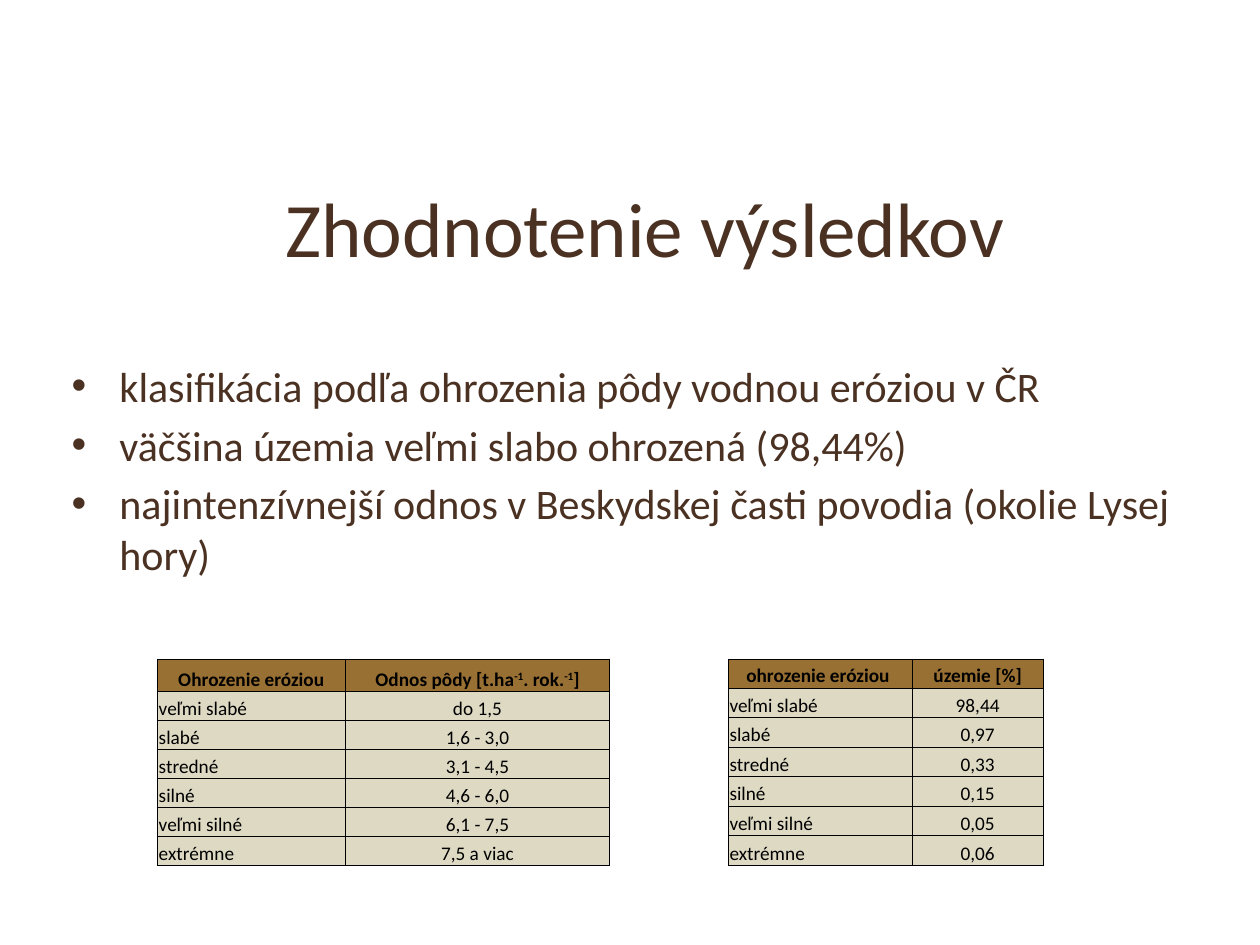
import pptx
import pptx.dml.color
import pptx.enum.text
import pptx.oxml
import pptx.oxml.ns
import pptx.util
from pptx.util import Inches

FONT = "Calibri"
BROWN, BLACK, HEADER_FILL, BODY_FILL = "4A3122", "000000", "997033", "DDD9C3"
ALIGN = pptx.enum.text.PP_ALIGN
ANCHOR = pptx.enum.text.MSO_ANCHOR
NS = pptx.oxml.ns.nsdecls("a")

TITLE = "Zhodnotenie výsledkov"
FINDINGS = [
    "klasifikácia podľa ohrozenia pôdy vodnou eróziou v ČR",
    "väčšina územia veľmi slabo ohrozená (98,44%)",
    "najintenzívnejší odnos v Beskydskej časti povodia (okolie Lysej hory)",
]
CLASSES = ["veľmi slabé", "slabé", "stredné", "silné", "veľmi silné", "extrémne"]

# A header is a list of runs; every second run is superscript
TABLE_TOP, TABLE_HEIGHT = 5.23, 1.64
TABLES = [
    {"left": 5.78, "columns": [1.46, 1.04], "header_height": 0.23,
     "headers": [["ohrozenie eróziou "], ["územie [%]"]],
     "values": ["98,44", "0,97", "0,33", "0,15", "0,05", "0,06"]},
    {"left": 1.25, "columns": [1.49, 2.1], "header_height": 0.26,
     "headers": [["Ohrozenie eróziou"],
                 ["Odnos pôdy [t.ha", "-1", ". rok.", "-1", "]"]],
     "values": ["do 1,5", "1,6 - 3,0", "3,1 - 4,5", "4,6 - 6,0", "6,1 - 7,5",
                "7,5 a viac"]},
]


def color(value):
    return pptx.dml.color.RGBColor.from_string(value)


def add_run(paragraph, text, size, ink, bold=False):
    run = paragraph.add_run()
    run.text = text
    run.font.name = FONT
    run.font.size = pptx.util.Pt(size)
    run.font.bold = bold
    run.font.color.rgb = color(ink)
    return run


def add_text_frame(slide, left, top, width, height, anchor):
    frame = slide.shapes.add_textbox(
        Inches(left), Inches(top), Inches(width), Inches(height)).text_frame
    frame.word_wrap = True
    frame.vertical_anchor = anchor
    return frame


def add_title(slide):
    paragraph = add_text_frame(slide, 0.62, 1.17, 9, 1.25, ANCHOR.MIDDLE).paragraphs[0]
    paragraph.alignment = ALIGN.CENTER
    properties = add_run(paragraph, TITLE, 44, BROWN)._r.get_or_add_rPr()
    shadow = pptx.oxml.parse_xml(
        f'<a:effectLst {NS}><a:outerShdw blurRad="38100" dist="38100" dir="2700000" '
        f'algn="tl"><a:srgbClr val="{BLACK}"><a:alpha val="43000"/></a:srgbClr>'
        '</a:outerShdw></a:effectLst>')
    properties.find(pptx.oxml.ns.qn("a:solidFill")).addnext(shadow)


def add_findings(slide):
    frame = add_text_frame(slide, 0.47, 2.81, 9, 4.95, ANCHOR.TOP)
    for index, finding in enumerate(FINDINGS):
        paragraph = frame.add_paragraph() if index else frame.paragraphs[0]
        properties = paragraph._p.get_or_add_pPr()
        properties.set("marL", str(Inches(0.38)))
        properties.set("indent", str(-Inches(0.38)))
        for bullet in (f'<a:buFont {NS} typeface="Arial"/>',
                       f'<a:buChar {NS} char="•"/>'):
            properties.append(pptx.oxml.parse_xml(bullet))
        if index:
            paragraph.space_before = pptx.util.Pt(4.8)
        add_run(paragraph, finding, 24, BROWN)


def fill_cell(cell, runs, alignment, fill, bold):
    cell.margin_left = cell.margin_right = cell.margin_top = Inches(0.01)
    cell.margin_bottom = 0
    cell.vertical_anchor = ANCHOR.BOTTOM
    paragraph = cell.text_frame.paragraphs[0]
    paragraph.alignment = alignment
    for index, text in enumerate(runs):
        run = add_run(paragraph, text, 11, BLACK, bold)
        if index % 2:
            run._r.get_or_add_rPr().set("baseline", "30000")
    # Borders come before the fill in the cell properties
    properties = cell._tc.get_or_add_tcPr()
    for side in ("lnL", "lnR", "lnT", "lnB"):
        properties.append(pptx.oxml.parse_xml(
            f'<a:{side} {NS} w="6350"><a:solidFill><a:srgbClr val="{BLACK}"/>'
            f'</a:solidFill></a:{side}>'))
    cell.fill.solid()
    cell.fill.fore_color.rgb = color(fill)


def add_erosion_table(slide, data):
    rows = [data["headers"]] + [[[name], [value]]
                                for name, value in zip(CLASSES, data["values"])]
    table = slide.shapes.add_table(
        len(rows), len(data["columns"]), Inches(data["left"]), Inches(TABLE_TOP),
        Inches(sum(data["columns"])), Inches(TABLE_HEIGHT)).table
    for column, width in zip(table.columns, data["columns"]):
        column.width = Inches(width)
    body_height = (TABLE_HEIGHT - data["header_height"]) / len(CLASSES)
    for r, row in enumerate(rows):
        is_header = r == 0
        table.rows[r].height = Inches(data["header_height"] if is_header else body_height)
        for c, runs in enumerate(row):
            alignment = ALIGN.CENTER if is_header or c else ALIGN.LEFT
            fill = HEADER_FILL if is_header else BODY_FILL
            fill_cell(table.cell(r, c), runs, alignment, fill, is_header)


def main():
    deck = pptx.Presentation()
    deck.slide_width, deck.slide_height = Inches(10), Inches(7.5)
    slide = deck.slides.add_slide(deck.slide_layouts[6])
    add_title(slide)
    add_findings(slide)
    for data in TABLES:
        add_erosion_table(slide, data)
    deck.save("out.pptx")


if __name__ == "__main__":
    main()
